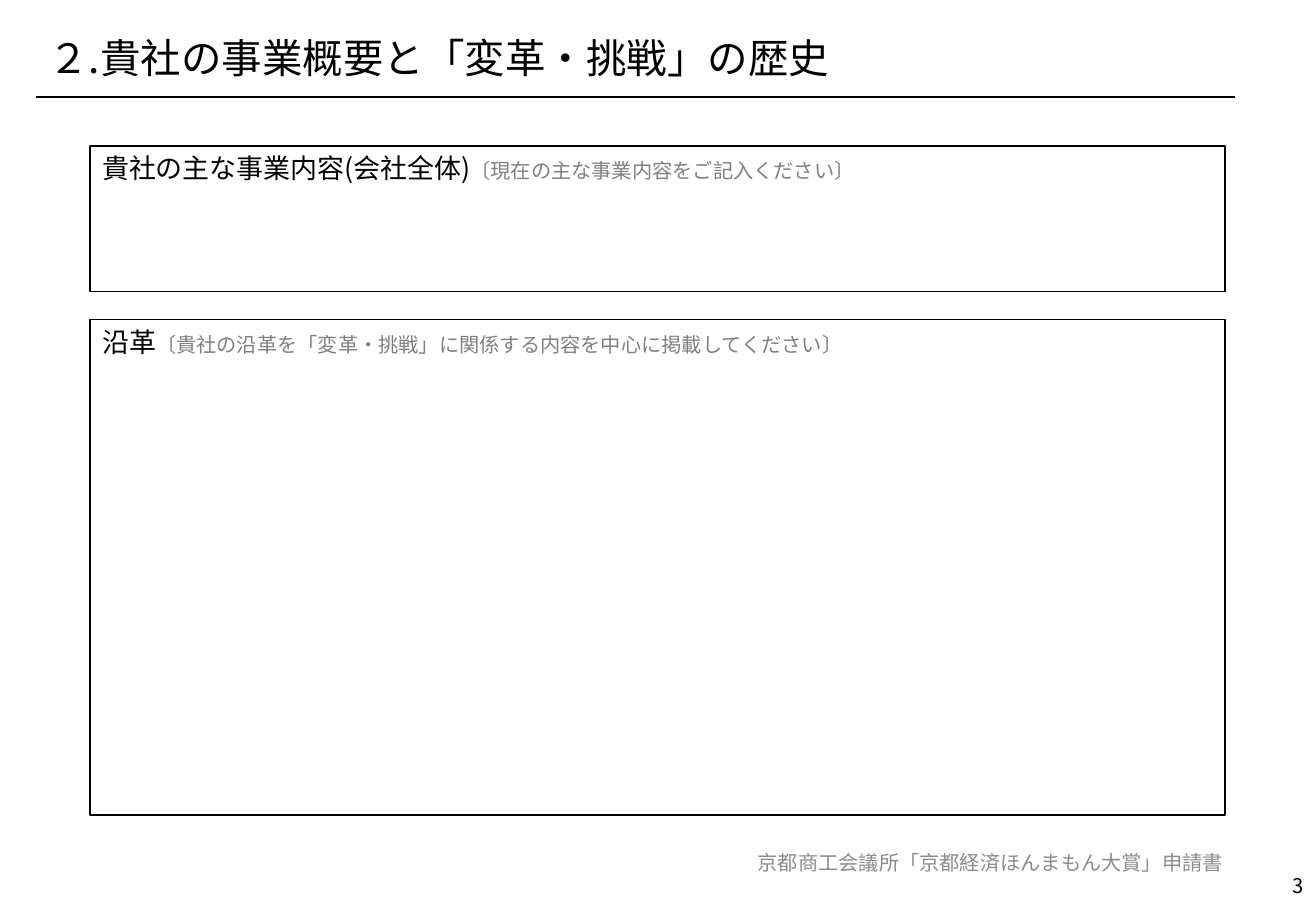
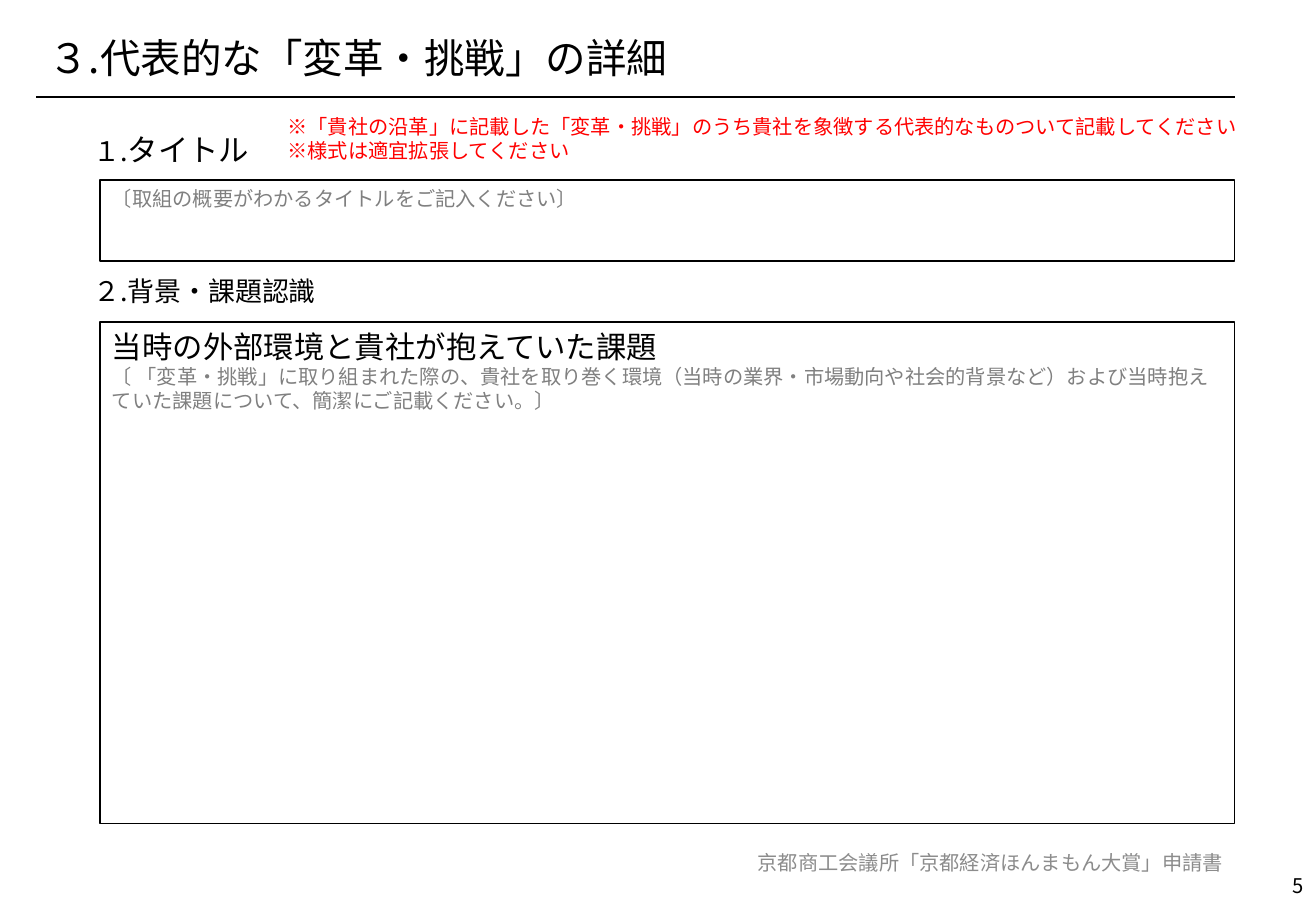
from lxml import etree
from pptx import Presentation
from pptx.dml.color import RGBColor
from pptx.enum.shapes import MSO_CONNECTOR, MSO_SHAPE
from pptx.enum.text import MSO_ANCHOR, PP_ALIGN
from pptx.oxml.ns import qn
from pptx.util import Pt

RECTANGLE, STRAIGHT = MSO_SHAPE.RECTANGLE, MSO_CONNECTOR.STRAIGHT
TOP, MIDDLE = MSO_ANCHOR.TOP, MSO_ANCHOR.MIDDLE
LEFT, RIGHT = PP_ALIGN.LEFT, PP_ALIGN.RIGHT

COLOURS = {"ink": "000000", "hint": "808080", "footer": "8C8C8C", "notice": "FF0000"}
NOTO, CALIBRI, ARIAL = "Noto Sans CJK JP", "Calibri", "Arial"

# Text styles: size, font, colour
STYLES = {
    "title": (24, NOTO, "ink"),
    "heading": (16, NOTO, "ink"),
    "large": (18, CALIBRI, "ink"),
    "hint": (12, CALIBRI, "hint"),
    "hint_arial": (12, ARIAL, "hint"),
    "notice": (12, CALIBRI, "notice"),
    "footer": (12, NOTO, "footer"),
    "number": (12, NOTO, "ink"),
}
FOOTER = "京都商工会議所「京都経済ほんまもん大賞」申請書"
BOX_WIDTH = 672.5
RULE_LEFT, RULE_RIGHT, RULE_Y = 21.6, 732.2, 57.6


def colour(name):
    return RGBColor.from_string(COLOURS[name])


def write(frame, paragraphs, anchor=TOP, align=LEFT, spacing=None):
    """Fill a frame; each paragraph is a list of (text, style) runs."""
    frame.word_wrap = True
    frame.vertical_anchor = anchor
    for index, runs in enumerate(paragraphs):
        paragraph = frame.paragraphs[0] if index == 0 else frame.add_paragraph()
        for key, value in {"alignment": align, "line_spacing": spacing}.items():
            setattr(paragraph, key, value)
        for text, style in runs:
            size, face, tone = STYLES[style]
            run = paragraph.add_run()
            run.text = text
            for key, value in {"size": Pt(size), "name": face}.items():
                setattr(run.font, key, value)
            run.font.color.rgb = colour(tone)
            if face == NOTO:
                east_asian = etree.SubElement(run.font._element, qn("a:ea"))
                east_asian.set("typeface", face)


def add_text(slide, left, top, width, height, paragraphs, **layout):
    label = slide.shapes.add_textbox(Pt(left), Pt(top), Pt(width), Pt(height))
    write(label.text_frame, paragraphs, **layout)


def add_entry_box(slide, left, top, height, paragraphs):
    box = slide.shapes.add_shape(RECTANGLE, Pt(left), Pt(top), Pt(BOX_WIDTH), Pt(height))
    box.shadow.inherit = False
    box.fill.background()
    box.line.color.rgb = colour("ink")
    box.line.width = Pt(1)
    write(box.text_frame, paragraphs)


def add_page(prs, title, number):
    """Add a slide with the shared title, rule, footer and page number."""
    slide = prs.slides.add_slide(prs.slide_layouts[6])
    add_text(slide, RULE_LEFT, 13.7, 651.6, 43.9, [[(title, "title")]],
             anchor=MIDDLE, spacing=0.9)
    rule = slide.shapes.add_connector(
        STRAIGHT, Pt(RULE_LEFT), Pt(RULE_Y), Pt(RULE_RIGHT), Pt(RULE_Y))
    rule.line.color.rgb = colour("ink")
    rule.line.width = Pt(1)
    etree.SubElement(rule._element.spPr, qn("a:effectLst"))
    add_text(slide, 353.5, 496.8, 378.7, 28.8, [[(FOOTER, "footer")]],
             anchor=MIDDLE, align=RIGHT)
    add_text(slide, 751.5, 509.8, 28.5, 30.2, [[(number, "number")]],
             anchor=MIDDLE, align=RIGHT)
    return slide


def build_history(prs):
    slide = add_page(prs, "２.貴社の事業概要と「変革・挑戦」の歴史", "3")
    left = 53.5
    add_entry_box(slide, left, 86.4, 86.4, [[
        ("貴社の主な事業内容(会社全体)", "heading"),
        ("〔現在の主な事業内容をご記入ください〕", "hint")]])
    add_entry_box(slide, left, 189.4, 293.8, [[
        ("沿革", "heading"),
        ("〔貴社の沿革を「変革・挑戦」に関係する内容を中心に掲載してください〕", "hint_arial")]])


def build_challenge(prs):
    slide = add_page(prs, "３.代表的な「変革・挑戦」の詳細", "5")
    box_left, label_left, label_width = 59.3, 48.2, 230.4

    # Title entry and its instructions
    add_text(slide, label_left, 74.2, label_width, 28.8,
             [[("１.", "heading"), ("タイトル", "large")]])
    add_text(slide, 163.4, 64.1, BOX_WIDTH, 36, [
        [("※「貴社の沿革」に記載した「変革・挑戦」のうち貴社を象徴する代表的なものついて記載してください", "notice")],
        [("※様式は適宜拡張してください", "notice")]])
    add_entry_box(slide, box_left, 106.6, 48.2,
                  [[("〔取組の概要がわかるタイトルをご記入ください〕", "hint")]])

    # Background entry
    add_text(slide, label_left, 159.1, label_width, 26.6,
             [[("２.背景・課題認識", "heading")]])
    add_entry_box(slide, box_left, 190.8, 297.4, [
        [("当時の外部環境と貴社が抱えていた課題", "large")],
        [("〔 「変革・挑戦」に取り組まれた際の、貴社を取り巻く環境（当時の業界・市場動向や社会的背景など）"
          "および当時抱えていた課題について、簡潔にご記載ください。〕", "hint")]])


def main():
    prs = Presentation()
    prs.slide_width, prs.slide_height = Pt(780), Pt(540)
    build_history(prs)
    build_challenge(prs)
    prs.save("out.pptx")


if __name__ == "__main__":
    main()
